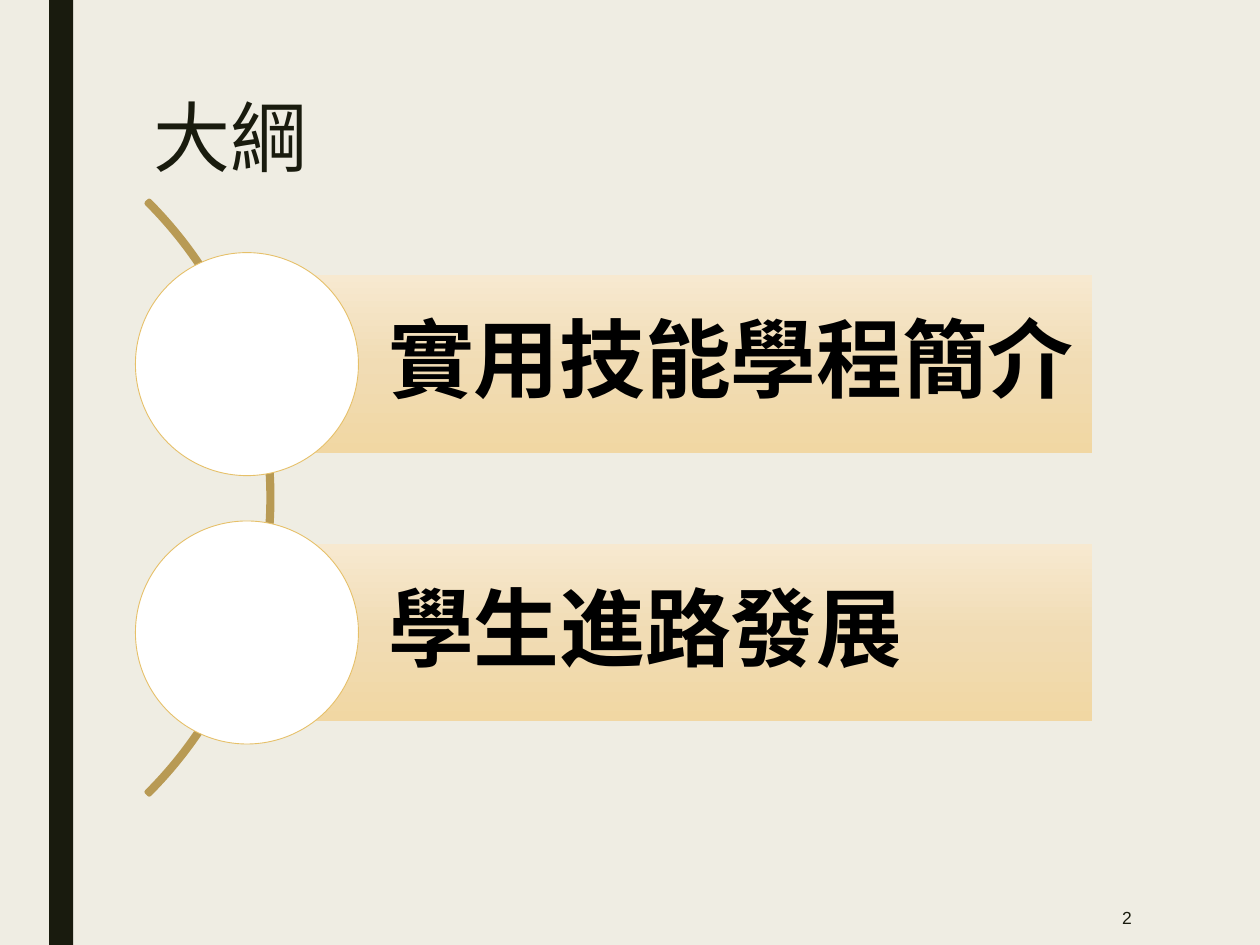
from copy import deepcopy

from lxml.etree import SubElement
from pptx import Presentation
from pptx.dml.color import RGBColor
from pptx.enum.shapes import MSO_SHAPE as Shape
from pptx.enum.text import MSO_ANCHOR as Anchor, PP_ALIGN as Align
from pptx.oxml.ns import qn
from pptx.util import Inches, Pt

TITLE = "大綱"
TOPICS = ["實用技能學程簡介", "學生進路發展"]
PAGE_NUMBER = "2"

CJK_FONT = "Noto Sans CJK SC"
INK, PAPER, GOLD, RING = "191B0E", "EFEDE3", "B89A54", "E6C069"
BAR_STOPS = [(0, "F7E9D0"), (0.5, "F1DCB4"), (1, "F1D7A3")]

BAR_LEFT, BAR_WIDTH, BAR_HEIGHT = 1.96, 6.71, 1.41
CIRCLE_SIZE = 1.77
FIRST_CENTER, TOPIC_STEP = 2.89, 2.13


def color(value):
    return RGBColor.from_string(value)


def add_shape(slide, kind, box, fill=None, line=None, line_width=1):
    shape = slide.shapes.add_shape(kind, *map(Inches, box))
    shape.shadow.inherit = False
    if fill:
        shape.fill.solid()
        shape.fill.fore_color.rgb = color(fill)
    else:
        shape.fill.background()
    if line:
        shape.line.color.rgb = color(line)
        shape.line.width = Pt(line_width)
    else:
        shape.line.fill.background()
    return shape


def fill_gradient(shape, stops):
    shape.fill.gradient()
    shape.fill.gradient_angle = 270
    first = shape._element.spPr.find(".//" + qn("a:gs"))
    first.addnext(deepcopy(first))
    for stop, (position, value) in zip(shape.fill.gradient_stops, stops):
        stop.position = position
        stop.color.rgb = color(value)


def write(shape, text, font, frame=None, paragraph=None):
    text_frame = shape.text_frame
    text_frame.text = text
    first = text_frame.paragraphs[0]
    run = first.runs[0]
    run.font.color.rgb = color(font.pop("color"))
    frame = {"word_wrap": True, **(frame or {})}
    for target, values in ((text_frame, frame), (first, paragraph or {}), (run.font, font)):
        for name, value in values.items():
            setattr(target, name, value)
    SubElement(run.font._element, qn("a:ea")).set("typeface", font["name"])


def add_topic(slide, center, topic):
    bar = add_shape(slide, Shape.RECTANGLE,
                    (BAR_LEFT, center - BAR_HEIGHT / 2, BAR_WIDTH, BAR_HEIGHT))
    fill_gradient(bar, BAR_STOPS)
    write(bar, topic,
          {"name": CJK_FONT, "size": Pt(49), "bold": True, "color": "000000"},
          {"vertical_anchor": Anchor.MIDDLE, "margin_left": Inches(1.12),
           "margin_right": Inches(0.1), "margin_top": Inches(0.14),
           "margin_bottom": Inches(0.14)},
          {"alignment": Align.LEFT, "line_spacing": 0.9})
    add_shape(slide, Shape.OVAL,
              (BAR_LEFT - CIRCLE_SIZE / 2, center - CIRCLE_SIZE / 2, CIRCLE_SIZE, CIRCLE_SIZE),
              "FFFFFF", RING, 0.5)


def main():
    """Build the outline slide and save it."""
    presentation = Presentation()
    presentation.slide_width, presentation.slide_height = Inches(10), Inches(7.5)
    slide = presentation.slides.add_slide(presentation.slide_layouts[6])
    slide.background.fill.solid()
    slide.background.fill.fore_color.rgb = color(PAPER)

    add_shape(slide, Shape.RECTANGLE, (0.39, 0, 0.19, 7.5), INK)
    title = slide.shapes.add_textbox(*map(Inches, (1.12, 0.75, 7.88, 1.62)))
    write(title, TITLE, {"name": CJK_FONT, "size": Pt(44), "color": INK},
          paragraph={"line_spacing": 0.89})

    arc = add_shape(slide, Shape.BLOCK_ARC, (-4.5, 0.62, 6.66, 6.66), line=GOLD, line_width=2.75)
    for index, value in enumerate((189, 27, 0.004)):
        arc.adjustments[index] = value

    for index, topic in enumerate(TOPICS):
        add_topic(slide, FIRST_CENTER + index * TOPIC_STEP, topic)

    number = slide.shapes.add_textbox(*map(Inches, (7.77, 7.06, 1.31, 0.44)))
    write(number, PAGE_NUMBER, {"name": "Arial", "size": Pt(10), "color": INK},
          {"vertical_anchor": Anchor.MIDDLE}, {"alignment": Align.RIGHT})
    presentation.save("out.pptx")


if __name__ == "__main__":
    main()
